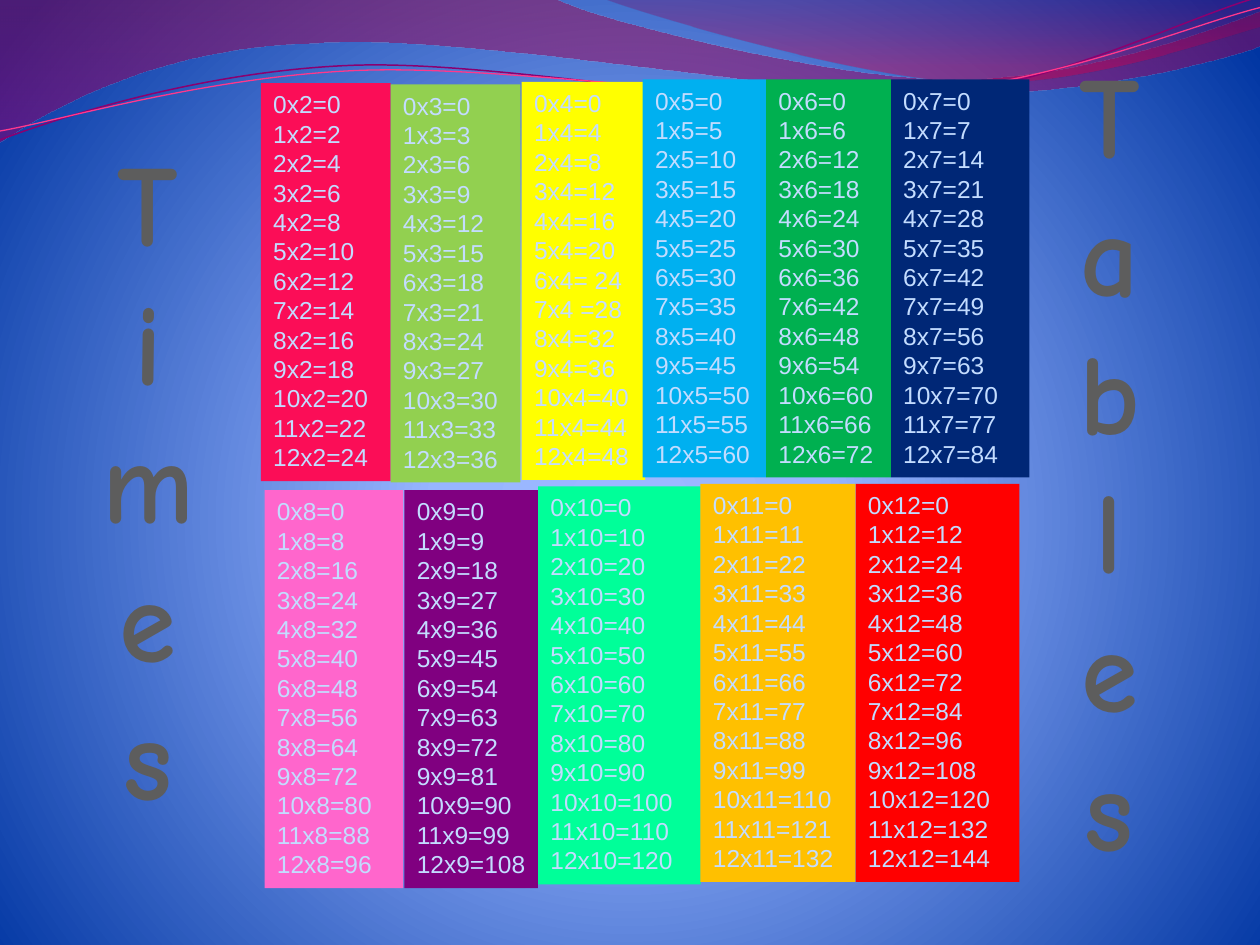
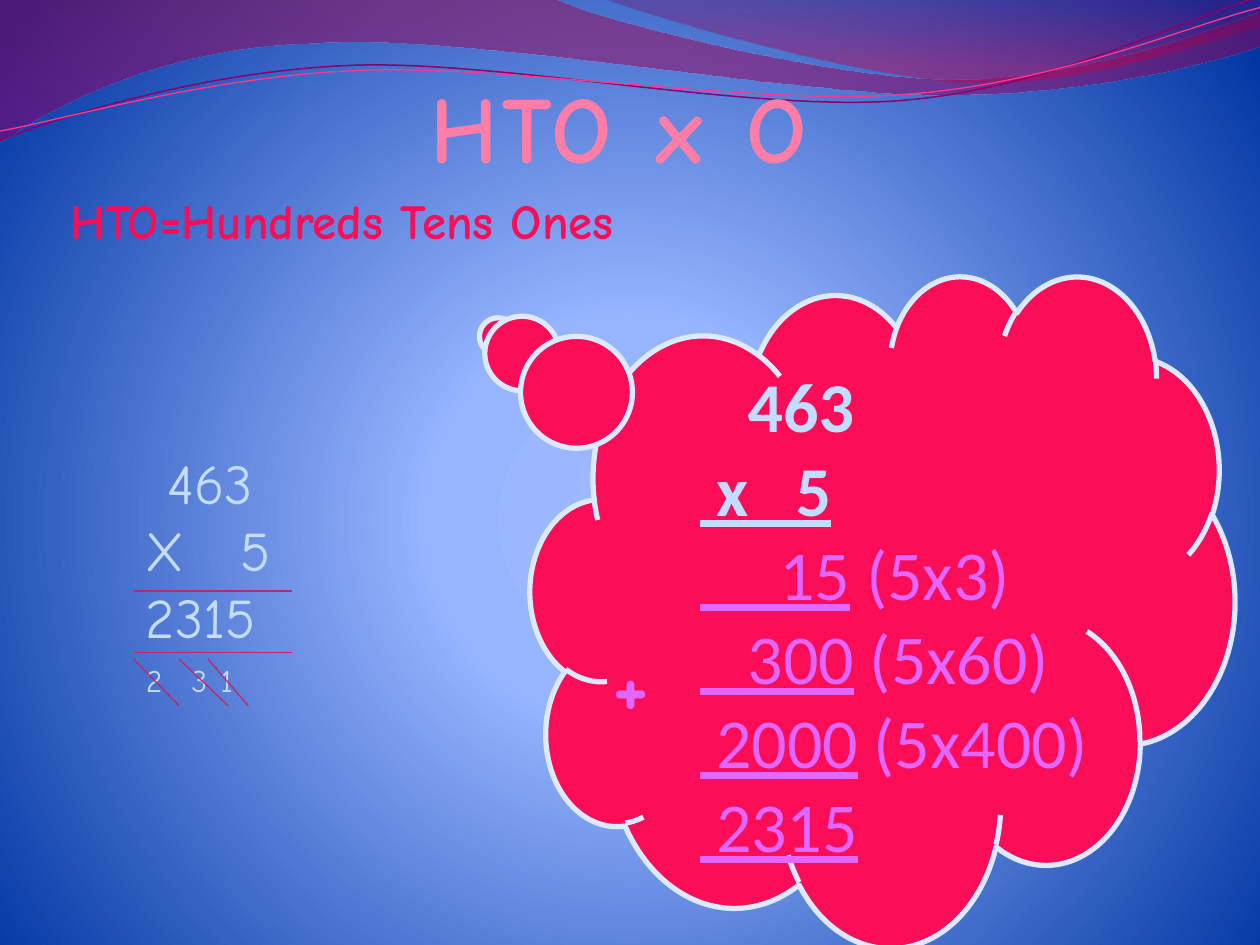
from lxml.etree import SubElement
from pptx import Presentation
from pptx.dml.color import RGBColor
from pptx.enum.shapes import MSO_CONNECTOR, MSO_SHAPE
from pptx.enum.text import MSO_ANCHOR, PP_ALIGN
from pptx.oxml import parse_xml
from pptx.oxml.ns import nsdecls, qn
from pptx.util import Inches, Pt

PALE = RGBColor(0xC3, 0xDC, 0xFF)
PINK = RGBColor(0xFB, 0x0D, 0x57)
TITLE_PINK = RGBColor(0xFF, 0x7D, 0xA7)
VIOLET = RGBColor(0xE3, 0x66, 0xFF)
GREY = RGBColor(0x5D, 0x5D, 0x5D)
CLOUD_EDGE = RGBColor(0xDB, 0xEA, 0xFF)
RULE = RGBColor(0xBF, 0x27, 0x67)
COMIC = "Comic Neue"

# Each wave: a start point, then cubic curves (three points) and lines (one point)
BANDS = [
    ([(0, 0), [(4.4, -0.01)],
      [(4.76, 0.17), (6.64, 0.63), (7.58, 0.63)],
      [(8.53, 0.63), (9.58, 0.26), (10, 0.09)], [(10.01, 0.36)],
      [(9.83, 0.44), (8.7, 0.76), (7.46, 0.75)],
      [(6.22, 0.75), (3.82, 0.28), (2.57, 0.34)],
      [(1.29, 0.36), (0.46, 0.83), (-0.01, 1.13)], [(0, 0)]],
     [(0, "A90042", 45), (1, "8E0073", 55)]),
    ([(4.79, -0.01),
      [(5.09, 0.11), (6.82, 0.62), (7.69, 0.65)],
      [(8.56, 0.69), (9.61, 0.32), (10, 0.21)], [(10, 0)], [(4.79, -0.01)]],
     [(0, "73005E", 30), (0.8, "C9004F", 45)]),
]
STRANDS = [
    ([(0, 1.11), [(0.48, 0.93), (1.58, 0.57), (2.77, 0.52)],
      [(3.95, 0.47), (5.93, 0.89), (7.13, 0.8)],
      [(8.33, 0.71), (9.38, 0.15), (9.98, -0.02)]], "8A0070", 0.85),
    ([(0, 1.04), [(0.47, 0.96), (1.64, 0.61), (2.83, 0.56)],
      [(4.03, 0.51), (5.97, 0.84), (7.17, 0.75)],
      [(8.36, 0.67), (9.41, 0.21), (10, 0.06)]], "FF388C", 0.75),
]


def trace(slide, wave, close):
    """Draw a wave as a freeform, then bend its straight sides into cubic curves."""
    (x0, y0), *segments = wave
    builder = slide.shapes.build_freeform(Inches(x0), Inches(y0))
    builder.add_line_segments([(Inches(x), Inches(y)) for x, y in (seg[-1] for seg in segments)],
                              close=close)
    sp = builder.convert_to_shape()
    sp.shadow.inherit = False
    outline = sp._element.find(".//" + qn("a:path"))
    for side, seg in zip(outline.findall(qn("a:lnTo")), segments):
        if len(seg) == 3:
            curve = parse_xml(f'<a:cubicBezTo {nsdecls("a")}/>')
            for x, y in seg:
                pt = SubElement(curve, qn("a:pt"))
                pt.set("x", str(Inches(x) - builder.shape_offset_x))
                pt.set("y", str(Inches(y) - builder.shape_offset_y))
            outline.replace(side, curve)
    return sp


def write(sp, lines, size, color, font=COMIC, bold=False, align=PP_ALIGN.LEFT, wrap=True):
    """Fill a shape with lines, each a list of (text, bold, underline) runs or a plain string."""
    tf = sp.text_frame
    tf.word_wrap = wrap
    tf.vertical_anchor = MSO_ANCHOR.TOP
    for i, line in enumerate(lines):
        p = tf.add_paragraph() if i else tf.paragraphs[0]
        p.alignment = align
        p.line_spacing = Pt(1.2 * size)
        for text, heavy, under in [(line, bold, None)] if isinstance(line, str) else line:
            r = p.add_run()
            r.text = text
            r.font.size, r.font.name = Pt(size), font
            r.font.bold, r.font.underline = heavy, under
            r.font.color.rgb = color


prs = Presentation()
prs.slide_width, prs.slide_height = Inches(10), Inches(7.5)

# Shared background
master = prs.slide_master
master.background.fill.solid()
bg = master._element.find(".//" + qn("p:bgPr"))
stops = "".join(f'<a:gs pos="{pos}"><a:srgbClr val="{rgb}"/></a:gs>'
                for pos, rgb in ((0, "9DB8FF"), (25000, "97B5FF"), (100000, "0035A2")))
bg.replace(bg[0], parse_xml(
    f'<a:gradFill {nsdecls("a")} rotWithShape="1"><a:gsLst>{stops}</a:gsLst>'
    '<a:path path="circle"><a:fillToRect l="10000" t="110000" r="10000" b="100000"/>'
    '</a:path></a:gradFill>'))

# Shared waves along the top
slides = [prs.slides.add_slide(prs.slide_layouts[6]) for _ in range(2)]
for slide in slides:
    for wave, band_stops in BANDS:
        sp = trace(slide, wave, True)
        sp.line.fill.background()
        sp.fill.gradient()
        sp.fill.gradient_angle = 270
        for stop, (pos, rgb, _) in zip(sp.fill.gradient_stops, band_stops):
            stop.position, stop.color.rgb = pos, RGBColor.from_string(rgb)
        colors = sp._element.spPr.iter(qn("a:srgbClr"))
        for clr, (_, _, opacity) in zip(list(colors), band_stops):
            SubElement(clr, qn("a:alpha")).set("val", str(opacity * 1000))
    for wave, rgb, width in STRANDS:
        sp = trace(slide, wave, False)
        sp.fill.background()
        sp.line.color.rgb = RGBColor.from_string(rgb)
        sp.line.width = Pt(width)

# Slide 1: times tables
tables_slide, hto_slide = slides
TABLES = [
    (2, 2.07, 0.66, 1.03, "FB0D57"), (3, 3.1, 0.67, 1.03, "92D050"),
    (4, 4.14, 0.65, 0.98, "FFFF00"), (5, 5.1, 0.63, 0.98, "00B0F0"),
    (7, 7.07, 0.63, 1.1, "002776"), (6, 6.08, 0.63, 0.99, "00B050"),
    (8, 2.1, 3.89, 1.1, "FF66CC"), (12, 6.79, 3.84, 1.3, "FF0000"),
    (9, 3.21, 3.89, 1.06, "800080"), (10, 4.27, 3.86, 1.29, "00FF99"),
    (11, 5.56, 3.84, 1.23, "FFC000"),
]
SPACED = {(6, 4): "= ", (7, 4): " ="}
for m, left, top, width, rgb in TABLES:
    sp = tables_slide.shapes.add_shape(MSO_SHAPE.RECTANGLE, Inches(left), Inches(top),
                                       Inches(width), Inches(3.16))
    sp.shadow.inherit = False
    sp.fill.solid()
    sp.fill.fore_color.rgb = RGBColor.from_string(rgb)
    sp.line.fill.background()
    write(sp, [f"{n}x{m}{SPACED.get((n, m), '=')}{n * m}" for n in range(13)],
          14, PALE, "Arial")

for word, left, top, height in (("Tables", 8.08, 0.29, 6.77), ("Times", 0.45, 0.99, 5.65)):
    sp = tables_slide.shapes.add_textbox(Inches(left), Inches(top), Inches(1.45), Inches(height))
    write(sp, word, 66, GREY, bold=True, align=PP_ALIGN.CENTER)

# Slide 2: hundreds, tens and ones times ones
cloud = hto_slide.shapes.add_shape(MSO_SHAPE.CLOUD_CALLOUT, Inches(4.21), Inches(2.18),
                                   Inches(5.59), Inches(5.33))
cloud.adjustments[0], cloud.adjustments[1] = -0.546, -0.408
cloud.shadow.inherit = False
cloud.fill.solid()
cloud.fill.fore_color.rgb = PINK
cloud.line.color.rgb = CLOUD_EDGE
cloud.line.width = Pt(3)

# The underlined blanks are the rule drawn below each row of the sum
long_sum = hto_slide.shapes.add_textbox(Inches(5.46), Inches(2.83), Inches(4.09), Inches(4.14))
partials = [[(blank, True, True), (number, False, True), (" ", True, False), (note, False, False)]
            for blank, number, note in (("     ", "15", "(5x3)"), ("   ", "300", "(5x60)"),
                                        (" ", "2000", "(5x400)"))]
write(long_sum, [[("   463", True, False)], [(" x   5", True, True)], *partials,
                 [(" 2315", False, True)]], 40, VIOLET, "Calibri")
for p in long_sum.text_frame.paragraphs[:2]:
    p.runs[0].font.color.rgb = PALE

LABELS = [
    ("HTO=Hundreds Tens Ones", 0.46, 1.46, 5.86, 0.57, 28, PINK, True),
    ("+", 4.76, 4.96, 0.81, 0.91, 48, VIOLET, True),
    ("1", 1.65, 5.2, 0.32, 0.4, 18, PALE, False),
    ("3", 1.42, 5.2, 0.36, 0.4, 18, PALE, False),
    ("2", 1.06, 5.2, 0.36, 0.4, 18, PALE, False),
]
for text, left, top, width, height, size, color, bold in LABELS:
    sp = hto_slide.shapes.add_textbox(Inches(left), Inches(top), Inches(width), Inches(height))
    write(sp, [text], size, color, bold=bold)

title = hto_slide.shapes.add_textbox(Inches(2.95), Inches(0.5), Inches(3.92), Inches(1.01))
write(title, ["HTO x O"], 54, TITLE_PINK, bold=True, align=PP_ALIGN.CENTER, wrap=False)
title.text_frame.paragraphs[0].runs[0].font._element.set("spc", "300")

# Short sum, its digits lined up by right tab stops
short_sum = hto_slide.shapes.add_textbox(Inches(1.06), Inches(3.51), Inches(1.5), Inches(1.72))
write(short_sum, ["\t463", "X\t5", "2315"], 32, PALE)
for p, pos in zip(short_sum.text_frame.paragraphs, (0.85, 0.99)):
    tab = SubElement(SubElement(p._p.get_or_add_pPr(), qn("a:tabLst")), qn("a:tab"))
    tab.set("pos", str(Inches(pos)))
    tab.set("algn", "r")

# Strokes through the carried digits, then the rules of the short sum
rules = [(x1, 5.23, x2, 5.6) for x1, x2 in ((1.06, 1.42), (1.42, 1.81), (1.65, 1.97))]
rules += [(2.32, y, 1.06, y) for y in (4.69, 5.18)]
for ends in rules:
    line = hto_slide.shapes.add_connector(MSO_CONNECTOR.STRAIGHT, *map(Inches, ends))
    line.line.color.rgb = RULE
    line.line.width = Pt(0.75)
    SubElement(line._element.spPr, qn("a:effectLst"))

prs.save("out.pptx")
